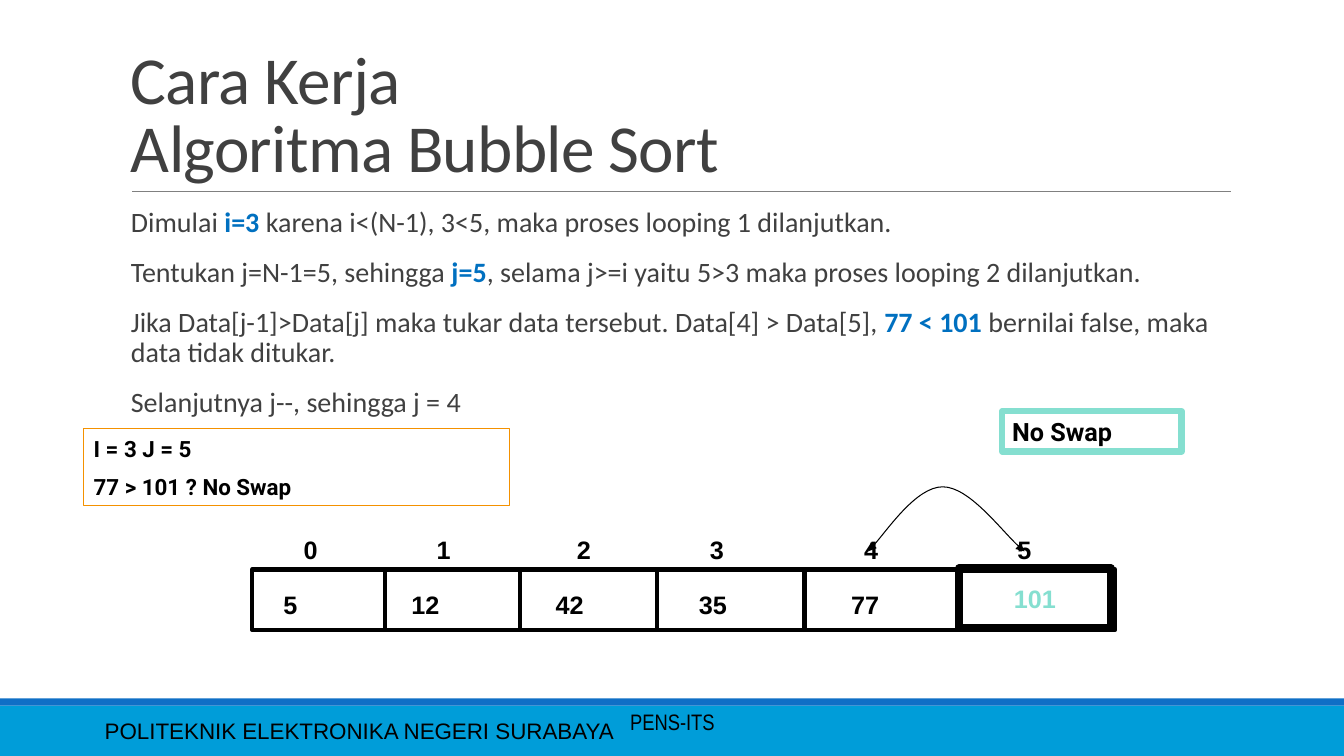
from lxml.etree import SubElement
from pptx import Presentation
from pptx.dml.color import RGBColor
from pptx.enum.shapes import MSO_CONNECTOR, MSO_SHAPE
from pptx.enum.text import MSO_ANCHOR, PP_ALIGN
from pptx.oxml.ns import qn
from pptx.util import Inches, Pt

BLACK = RGBColor(0x00, 0x00, 0x00)
DARK_GREY = RGBColor(0x40, 0x40, 0x40)
GREY = RGBColor(0x80, 0x80, 0x80)
SKY_BLUE = RGBColor(0x00, 0x9D, 0xD9)
DEEP_BLUE = RGBColor(0x0F, 0x6F, 0xC6)
HIGHLIGHT = RGBColor(0x00, 0x70, 0xC0)
ORANGE = RGBColor(0xF4, 0x91, 0x00)
MINT = RGBColor(0x85, 0xDF, 0xD0)

# Each paragraph is a list of (text, highlighted) runs.
EXPLANATION = [
    [("Dimulai ", False), ("i=3", True),
     (" karena i<(N-1), 3<5, maka proses looping 1 dilanjutkan.", False)],
    [("Tentukan j=N-1=5, sehingga ", False), ("j=5", True),
     (", selama j>=i yaitu 5>3 maka proses looping 2 dilanjutkan.", False)],
    [("Jika Data[j-1]>Data[j] maka tukar data tersebut. Data[4] > Data[5], ", False),
     ("77 < 101 ", True), ("bernilai false, maka data tidak ditukar.", False)],
    [("Selanjutnya j--, sehingga j = 4", False)],
]

INDEX_CENTERS = [3.08, 4.4, 5.79, 7.11, 8.64, 10.16]
VALUES = [("5", 2.88), ("12", 4.22), ("42", 5.65), ("35", 7.07), ("77", 8.58)]
CELL_DIVIDERS = [3.82, 5.16, 6.52, 7.98, 9.49]
SWAP_ARC = [(8.61, 5.47), (8.73, 5.36), (9.09, 4.83), (9.35, 4.83),
            (9.61, 4.83), (9.99, 5.34), (10.16, 5.47)]


def style_font(font, name, size, color, bold=False):
    font.name = name
    font.size = Pt(size)
    font.color.rgb = color
    font.bold = bold


def write_lines(shape, lines, name, size, color, bold=False, align=PP_ALIGN.LEFT,
                anchor=MSO_ANCHOR.MIDDLE, gap=0):
    frame = shape.text_frame
    frame.word_wrap = True
    frame.vertical_anchor = anchor
    for number, line in enumerate(lines):
        paragraph = frame.add_paragraph() if number else frame.paragraphs[0]
        paragraph.text = line
        paragraph.alignment = align
        if number:
            paragraph.space_before = Pt(gap)
        style_font(paragraph.font, name, size, color, bold)


def add_text(slide, box, lines, name, size, color, **options):
    shape = slide.shapes.add_textbox(*map(Inches, box))
    write_lines(shape, lines, name, size, color, **options)
    return shape


def add_rectangle(slide, box, fill=None, line=None, width=0):
    shape = slide.shapes.add_shape(MSO_SHAPE.RECTANGLE, *map(Inches, box))
    shape.shadow.inherit = False
    if fill is None:
        shape.fill.background()
    else:
        shape.fill.solid()
        shape.fill.fore_color.rgb = fill
    if line is None:
        shape.line.fill.background()
    else:
        shape.line.color.rgb = line
        shape.line.width = Pt(width)
    return shape


def add_line(slide, start, end, color, width):
    line = slide.shapes.add_connector(
        MSO_CONNECTOR.STRAIGHT, *map(Inches, start + end))
    line.line.color.rgb = color
    line.line.width = Pt(width)
    SubElement(line._element.spPr, qn("a:effectLst"))


def add_double_arrow_curve(slide, points):
    """Draw a chain of cubic curves: a start, then three points per curve."""
    start, *rest = [(Inches(x), Inches(y)) for x, y in points]
    builder = slide.shapes.build_freeform(*start)
    builder.add_line_segments(rest, close=False)
    curve = builder.convert_to_shape()
    curve.shadow.inherit = False
    curve.fill.background()
    curve.line.color.rgb = BLACK
    curve.line.width = Pt(0.75)
    outline = curve._element.spPr.find(".//" + qn("a:path"))
    segments = outline.findall(qn("a:lnTo"))
    for first in range(0, len(segments), 3):
        bezier = SubElement(outline, qn("a:cubicBezTo"))
        for segment in segments[first:first + 3]:
            bezier.append(segment[0])
            outline.remove(segment)
    line = curve.line._get_or_add_ln()
    for end in ("a:headEnd", "a:tailEnd"):
        SubElement(line, qn(end), type="triangle")


def add_title(slide):
    title = add_text(slide, (1.2, 0.31, 11, 1.59), ["Cara Kerja\vAlgoritma Bubble Sort"],
                     "Calibri", 48, DARK_GREY, anchor=MSO_ANCHOR.BOTTOM)
    paragraph = title.text_frame.paragraphs[0]
    paragraph.line_spacing = 0.85
    for run in paragraph.runs:
        run._r.get_or_add_rPr().set("spc", "-50")


def add_explanation(slide):
    frame = slide.shapes.add_textbox(*map(Inches, (1.2, 2.02, 11, 4.4))).text_frame
    frame.word_wrap = True
    frame.margin_right = 0
    for number, runs in enumerate(EXPLANATION):
        paragraph = frame.add_paragraph() if number else frame.paragraphs[0]
        paragraph.line_spacing = 0.9
        paragraph.space_after = Pt(2)
        if number:
            paragraph.space_before = Pt(12)
        for text, highlighted in runs:
            run = paragraph.add_run()
            run.text = text
            style_font(run.font, "Calibri", 20,
                       HIGHLIGHT if highlighted else DARK_GREY, highlighted)


def add_array(slide):
    add_rectangle(slide, (2.5, 5.65, 8.56, 0.6), line=BLACK, width=3)
    for x in CELL_DIVIDERS:
        add_line(slide, (x, 5.65), (x, 6.25), BLACK, 3)
    labels = [(str(index), x, 5.25) for index, x in enumerate(INDEX_CENTERS)]
    labels += [(value, x, 5.79) for value, x in VALUES]
    for text, center, top in labels:
        add_text(slide, (center - 0.3, top, 0.6, 0.41), [text], "Arial", 18, BLACK,
                 bold=True, align=PP_ALIGN.CENTER)
    current = add_rectangle(slide, (9.51, 5.64, 1.51, 0.59), line=BLACK, width=6)
    write_lines(current, ["101"], "Arial", 18, MINT, bold=True, align=PP_ALIGN.CENTER)


def add_footer(slide):
    add_rectangle(slide, (0, 7, 13.33, 0.5), fill=SKY_BLUE)
    add_rectangle(slide, (0, 6.93, 13.33, 0.07), fill=DEEP_BLUE)
    add_text(slide, (0.94, 7.05, 8.41, 0.4), ["POLITEKNIK ELEKTRONIKA NEGERI SURABAYA"],
             "Arial", 16, BLACK)
    add_text(slide, (4.56, 6.9, 4.22, 0.52), ["PENS-ITS"], "Arial Narrow", 16, BLACK,
             align=PP_ALIGN.CENTER)


def main():
    presentation = Presentation()
    presentation.slide_width = Inches(13.33)
    presentation.slide_height = Inches(7.5)
    slide = presentation.slides.add_slide(presentation.slide_layouts[6])

    add_footer(slide)
    add_line(slide, (1.31, 1.9), (12.21, 1.9), GREY, 0.5)
    add_title(slide)
    add_explanation(slide)
    add_array(slide)
    comparison = add_rectangle(slide, (0.83, 4.25, 4.22, 0.77), line=ORANGE, width=0.75)
    write_lines(comparison, ["I = 3 J = 5", "77 > 101 ? No Swap"], "Roboto", 16, BLACK,
                bold=True, gap=8)
    add_double_arrow_curve(slide, SWAP_ARC)
    result = add_rectangle(slide, (9.94, 4.08, 1.78, 0.4), line=MINT, width=4.5)
    write_lines(result, ["No Swap"], "Roboto", 18, BLACK, bold=True)

    presentation.save("out.pptx")


if __name__ == "__main__":
    main()
